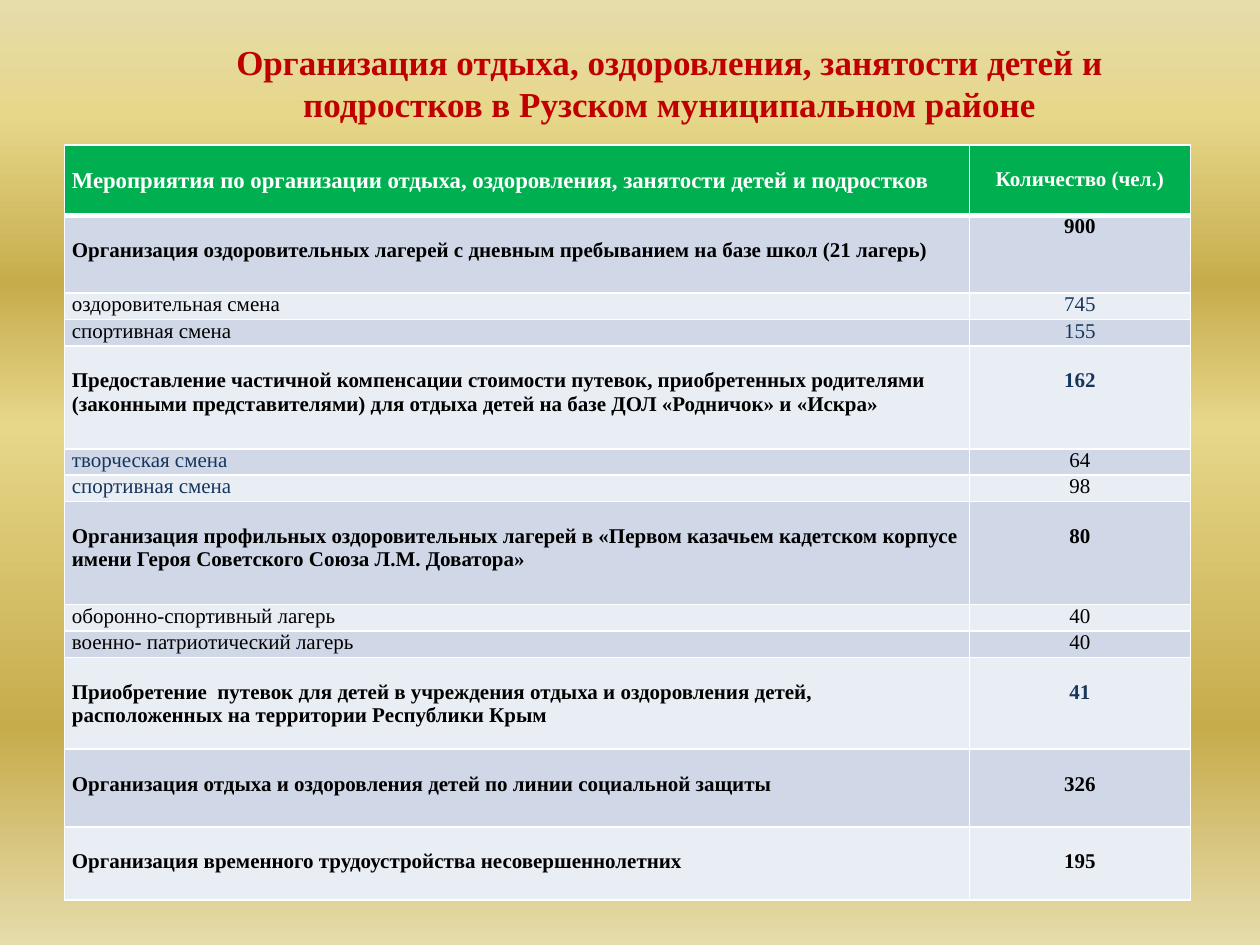
from dataclasses import dataclass
from lxml import etree
from pptx import Presentation
from pptx.dml.color import RGBColor
from pptx.enum.text import MSO_ANCHOR, PP_ALIGN
from pptx.oxml.ns import qn
from pptx.util import Cm, Pt

TOP = MSO_ANCHOR.TOP
LEFT, CENTER = PP_ALIGN.LEFT, PP_ALIGN.CENTER


@dataclass(frozen=True)
class Theme:
    font: str = "Times New Roman"
    title_size: int = 20
    header_size: int = 13
    body_size: int = 12
    title: str = "C00000"
    header_fill: str = "00B050"
    bands: tuple = ("D0D8E8", "E9EDF4")
    white: str = "FFFFFF"
    black: str = "000000"
    navy: str = "17365D"
    background: tuple = ((0, "E6DCAC"), (12, "E6D78A"), (30, "C7AC4C"),
                         (45, "E6D78A"), (77, "C7AC4C"), (100, "E6DCAC"))


THEME = Theme()
BLACK, NAVY = THEME.black, THEME.navy

TITLE = "Организация отдыха, оздоровления, занятости детей и подростков в Рузском муниципальном районе"
HEADER = ("Мероприятия по организации отдыха, оздоровления, занятости детей и подростков",
          "Количество (чел.)")
GROUPS = [
    (1.57, "Организация оздоровительных лагерей с дневным пребыванием на базе школ (21 лагерь)",
     "900", BLACK,
     [("оздоровительная смена", "745", BLACK, NAVY),
      ("спортивная смена", "155", BLACK, NAVY)]),
    (2.08, "Предоставление частичной компенсации стоимости путевок, приобретенных родителями "
     "(законными представителями) для отдыха детей на базе ДОЛ «Родничок» и «Искра»",
     "162", NAVY,
     [("творческая смена", "64", NAVY, BLACK),
      ("спортивная смена", "98", NAVY, BLACK)]),
    (2.08, "Организация профильных оздоровительных лагерей в «Первом казачьем кадетском корпусе "
     "имени Героя Советского Союза Л.М. Доватора»",
     "80", BLACK,
     [("оборонно-спортивный лагерь", "40", BLACK, BLACK),
      ("военно- патриотический лагерь", "40", BLACK, BLACK)]),
    (1.85, "Приобретение  путевок для детей в учреждения отдыха и оздоровления детей, "
     "расположенных на территории Республики Крым", "41", NAVY, []),
    (1.57, "Организация отдыха и оздоровления детей по линии социальной защиты", "326", BLACK, []),
    (1.47, "Организация временного трудоустройства несовершеннолетних", "195", BLACK, []),
]
COLUMN_WIDTHS = (18.24, 4.46)
HEADER_HEIGHT, SHIFT_HEIGHT = 1.42, 0.53
LINE_GAP, SIDE_INSET = 0.47, 0.15


def write(frame, text, size, color, bold, align):
    frame.text = text
    para = frame.paragraphs[0]
    para.alignment = align
    font = para.runs[0].font
    font.name, font.size, font.bold = THEME.font, Pt(size), bold
    font.color.rgb = RGBColor.from_string(color)


def paint_background(page):
    fill = page.background.fill
    fill.gradient()
    fill.gradient_angle = 270
    stops = next(page.element.iter(qn("a:gsLst")))
    for stop in list(stops):
        stops.remove(stop)
    for position, color in THEME.background:
        stop = etree.SubElement(stops, qn("a:gs"), pos=str(position * 1000))
        etree.SubElement(stop, qn("a:srgbClr"), val=color)


def add_borders(cell, top, bottom):
    properties = cell._tc.get_or_add_tcPr()
    for side, width in (("L", 1), ("R", 1), ("T", top), ("B", bottom)):
        line = etree.SubElement(properties, qn(f"a:ln{side}"), w=str(Pt(width)))
        solid = etree.SubElement(line, qn("a:solidFill"))
        etree.SubElement(solid, qn("a:srgbClr"), val=THEME.white)


def table_rows():
    white, size = THEME.white, THEME.body_size
    yield HEADER_HEIGHT, [(HEADER[0], THEME.header_size, white, True, LINE_GAP),
                          (HEADER[1], size, white, True, LINE_GAP)]
    for index, (height, name, count, count_color, shifts) in enumerate(GROUPS):
        count_gap = LINE_GAP if index else 0
        yield height, [(name, size, BLACK, True, LINE_GAP),
                       (count, size, count_color, True, count_gap)]
        for shift, number, shift_color, number_color in shifts:
            yield SHIFT_HEIGHT, [(shift, size, shift_color, False, 0),
                                 (number, size, number_color, False, 0)]


def add_title(page):
    box = page.shapes.add_textbox(Cm(3.3), Cm(0.53), Cm(20.4), Cm(3))
    frame = box.text_frame
    frame.word_wrap = True
    frame.vertical_anchor = TOP
    frame.margin_top = Cm(0.28)
    write(frame, TITLE, THEME.title_size, THEME.title, True, CENTER)


def add_activity_table(page):
    rows = list(table_rows())
    total_height = sum(height for height, cells in rows)
    table = page.shapes.add_table(len(rows), len(COLUMN_WIDTHS), Cm(1.3), Cm(2.92),
                                  Cm(sum(COLUMN_WIDTHS)), Cm(total_height)).table
    for column, width in zip(table.columns, COLUMN_WIDTHS):
        column.width = Cm(width)
    for index, (height, cells) in enumerate(rows):
        table.rows[index].height = Cm(height)
        color = THEME.bands[(index - 1) % 2] if index else THEME.header_fill
        for position, (text, size, ink, bold, gap) in enumerate(cells):
            cell = table.cell(index, position)
            add_borders(cell, 3 if index == 1 else 1, 3 if index == 0 else 1)
            cell.fill.solid()
            cell.fill.fore_color.rgb = RGBColor.from_string(color)
            cell.margin_left = cell.margin_right = Cm(SIDE_INSET)
            cell.margin_top, cell.margin_bottom = Cm(gap), Cm(0)
            cell.vertical_anchor = TOP
            write(cell.text_frame, text, size, ink, bold, CENTER if position else LEFT)


def main():
    deck = Presentation()
    deck.slide_width, deck.slide_height = Cm(25.4), Cm(19.05)
    page = deck.slides.add_slide(deck.slide_layouts[6])
    paint_background(page)
    add_title(page)
    add_activity_table(page)
    deck.save("out.pptx")


if __name__ == "__main__":
    main()
